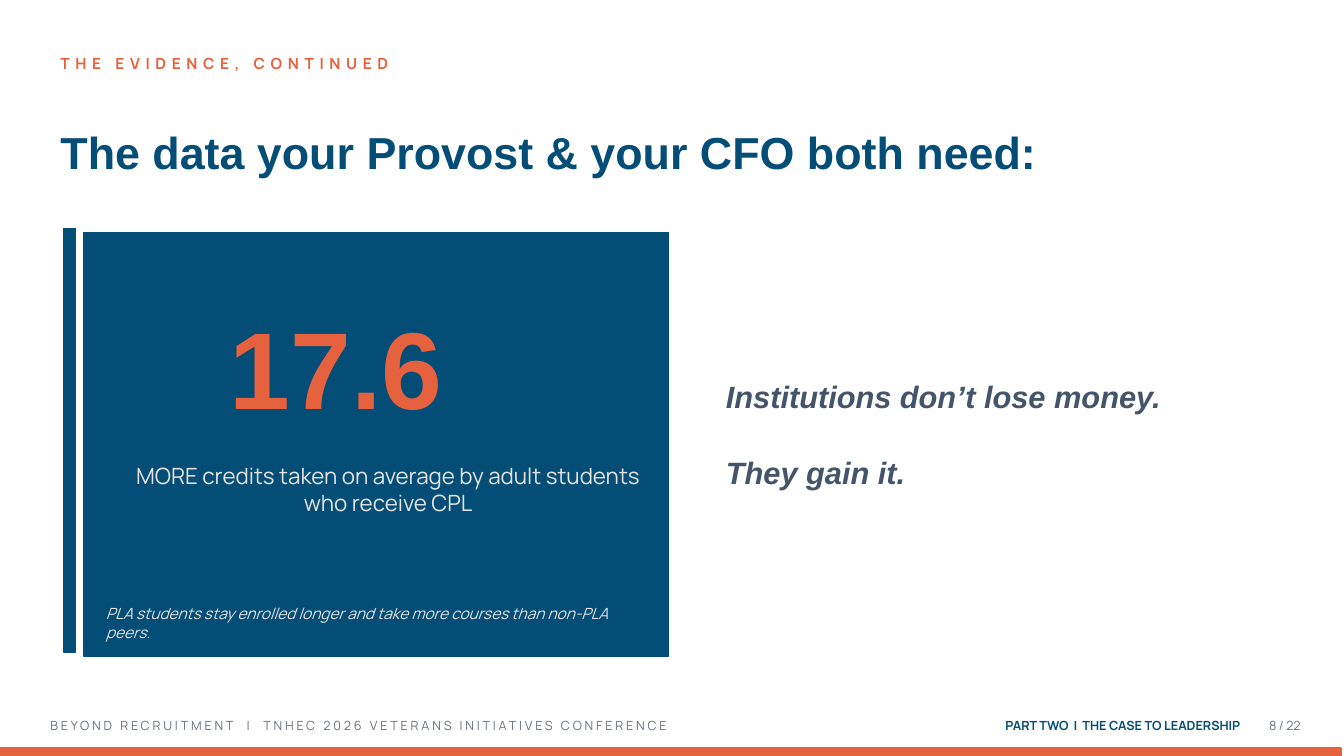
from dataclasses import dataclass

from pptx import Presentation
from pptx import util as u
from pptx.dml.color import RGBColor
from pptx.enum import shapes, text


@dataclass(frozen=True)
class Theme:
    navy: str = "044D76"
    orange: str = "E6613E"
    slate: str = "44546A"
    gray: str = "6B7280"
    pale: str = "E5E3E2"
    heading_font: str = "Arial"
    body_font: str = "Manrope"
    figure_size: int = 78
    title_size: int = 32
    quote_size: int = 22
    body_size: int = 16
    small_size: int = 11
    footer_size: int = 9


class SlideBuilder:
    def __init__(self, presentation, theme):
        self.theme = theme
        self.slide = presentation.slides.add_slide(presentation.slide_layouts[6])

    def bar(self, box, color):
        shape = self.slide.shapes.add_shape(
            shapes.MSO_SHAPE.RECTANGLE, *map(u.Inches, box))
        shape.shadow.inherit = False
        shape.fill.solid()
        shape.fill.fore_color.rgb = RGBColor.from_string(color)
        shape.line.color.rgb = RGBColor.from_string(color)
        shape.line.width = u.Pt(1)

    def label(self, box, lines, size, color, align="LEFT", tracking=0, gap=0, **font_format):
        """Add vertically centred text; tracking and gap between lines are in points."""
        frame = self.slide.shapes.add_textbox(*map(u.Inches, box)).text_frame
        frame_format = dict(word_wrap=True, vertical_anchor=text.MSO_ANCHOR.MIDDLE,
                            margin_left=0, margin_right=0, margin_top=0, margin_bottom=0)
        for name, value in frame_format.items():
            setattr(frame, name, value)
        font_format = {"name": self.theme.body_font, "size": u.Pt(size), **font_format}
        for index, line in enumerate(lines):
            paragraph = frame.add_paragraph() if index else frame.paragraphs[0]
            paragraph.alignment = text.PP_ALIGN[align]
            if index:
                paragraph.space_before = u.Pt(gap)
            run = paragraph.add_run()
            run.text = line
            for name, value in font_format.items():
                setattr(run.font, name, value)
            run.font.color.rgb = RGBColor.from_string(color)
            if tracking:
                run._r.get_or_add_rPr().set("spc", str(tracking * 100))


def add_header(builder):
    theme = builder.theme
    builder.label((0.6, 0.45, 12, 0.35), ["THE EVIDENCE, CONTINUED"],
                  theme.small_size, theme.orange, tracking=4, bold=True)
    builder.label((0.6, 0.8, 12, 1.4), ["The data your Provost & your CFO both need:"],
                  theme.title_size, theme.navy, name=theme.heading_font, bold=True)


def add_evidence(builder):
    theme = builder.theme
    builder.bar((0.63, 2.27, 0.12, 4.2), theme.navy)
    builder.bar((0.83, 2.31, 5.8, 4.2), theme.navy)
    builder.label((7.2, 4.06, 5.3, 0.5),
                  ["Institutions don’t lose money.", "They gain it."],
                  theme.quote_size, theme.slate, gap=27.5,
                  name=theme.heading_font, bold=True, italic=True)
    builder.label((2.28, 3.03, 5.3, 1.2), ["17.6"], theme.figure_size, theme.orange,
                  name=theme.heading_font, bold=True)
    builder.label((1.2, 4.5, 5.3, 0.7),
                  ["MORE credits taken on average by adult students who receive CPL"],
                  theme.body_size, theme.pale, align="CENTER")
    builder.label((1.05, 5.98, 5.3, 0.4),
                  ["PLA students stay enrolled longer and take more courses than non-PLA peers."],
                  theme.small_size, theme.pale, italic=True)


def add_footer(builder):
    theme = builder.theme
    builder.bar((0, 7.42, 13.3, 0.08), theme.orange)
    builder.label((0.5, 7.05, 8, 0.3),
                  ["BEYOND RECRUITMENT  |  TNHEC 2026 VETERANS INITIATIVES CONFERENCE"],
                  theme.footer_size, theme.gray, tracking=2)
    builder.label((8.8, 7.05, 3.5, 0.3), ["PART TWO  |  THE CASE TO LEADERSHIP"],
                  theme.footer_size, theme.navy, align="RIGHT", bold=True)
    builder.label((12.4, 7.05, 0.5, 0.3), ["8 / 22"],
                  theme.footer_size, theme.gray, align="RIGHT")


def main():
    presentation = Presentation()
    presentation.slide_width = u.Inches(13.33)
    presentation.slide_height = u.Inches(7.5)
    builder = SlideBuilder(presentation, Theme())
    add_header(builder)
    add_evidence(builder)
    add_footer(builder)
    presentation.save("out.pptx")


if __name__ == "__main__":
    main()
